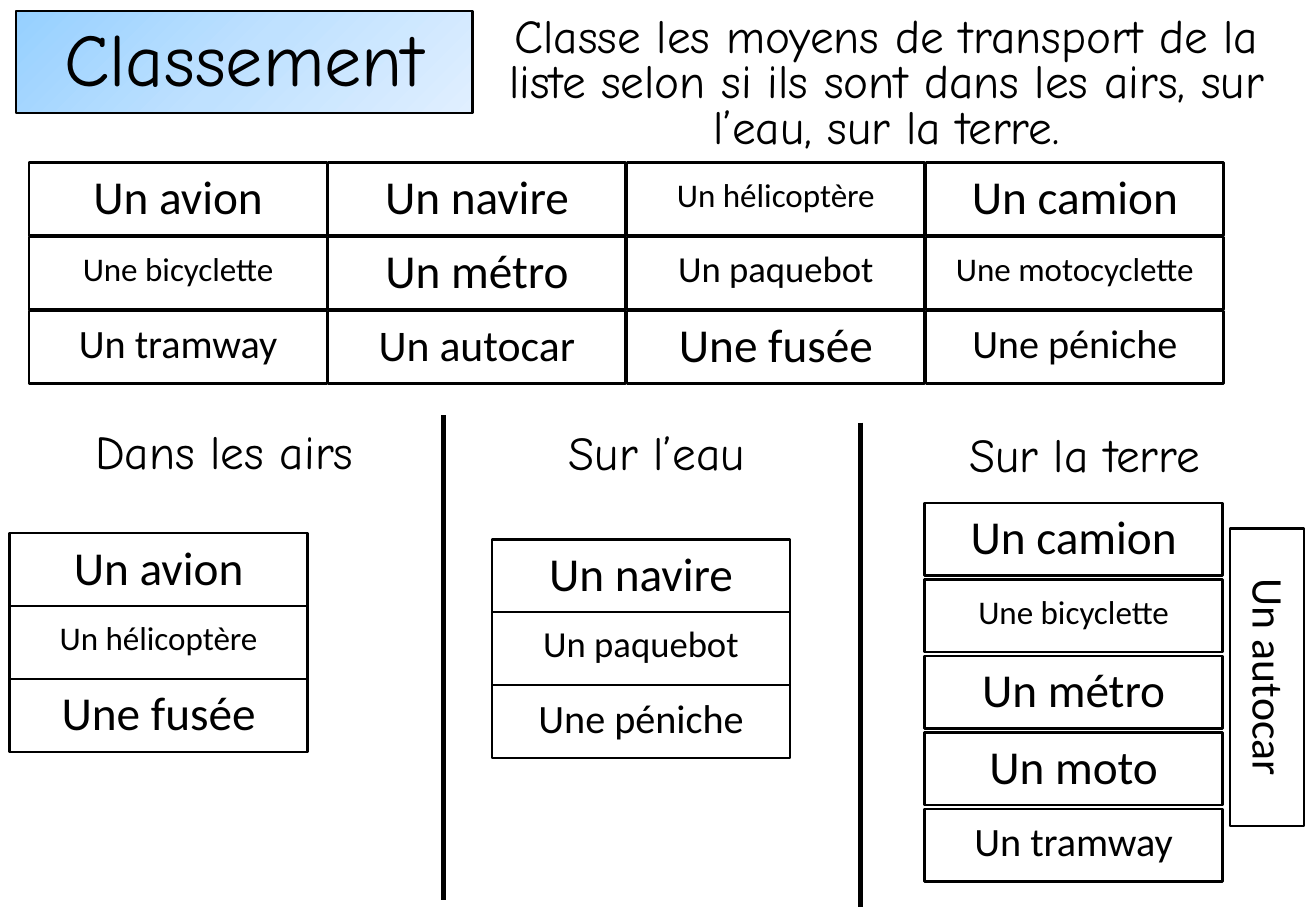
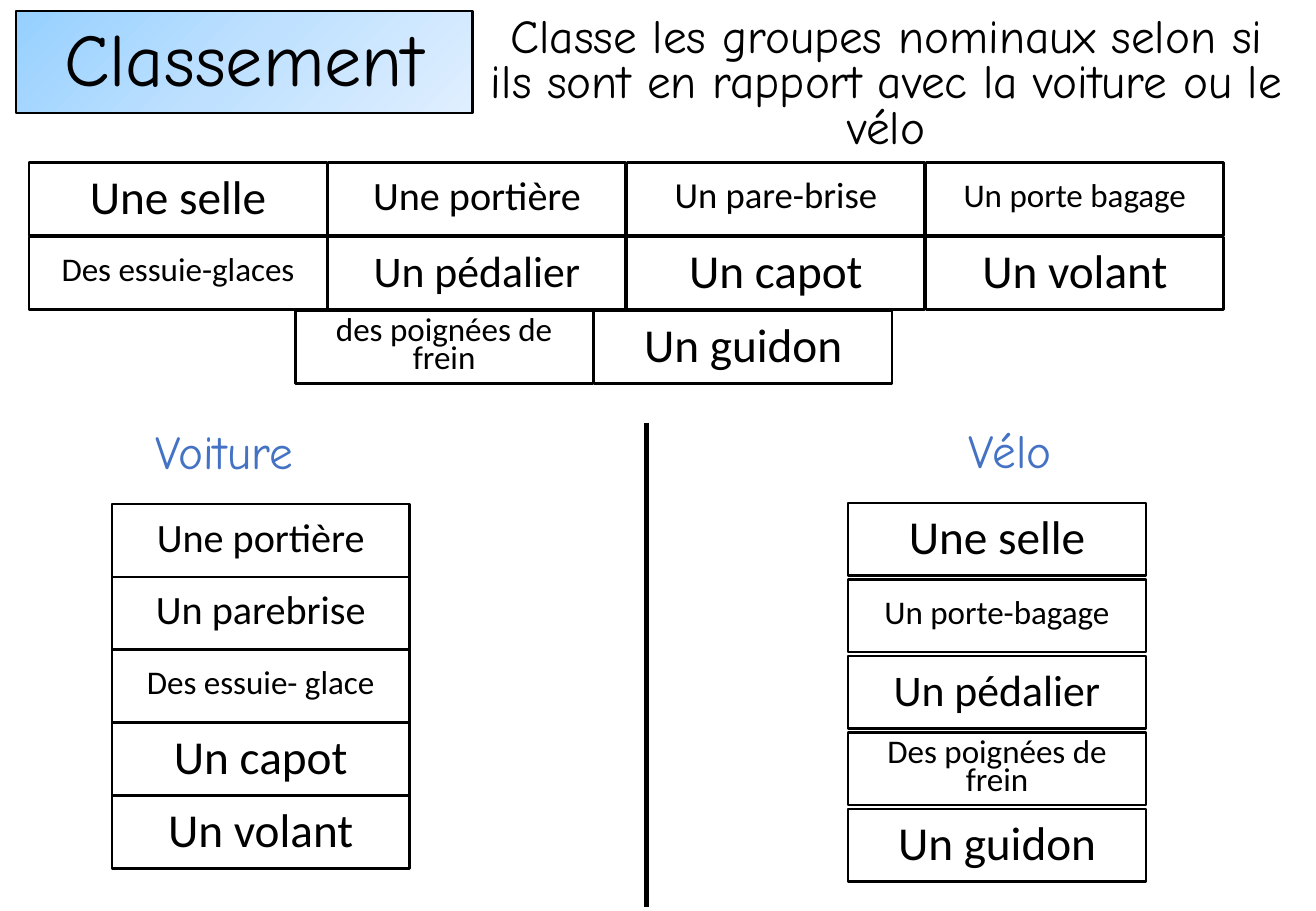
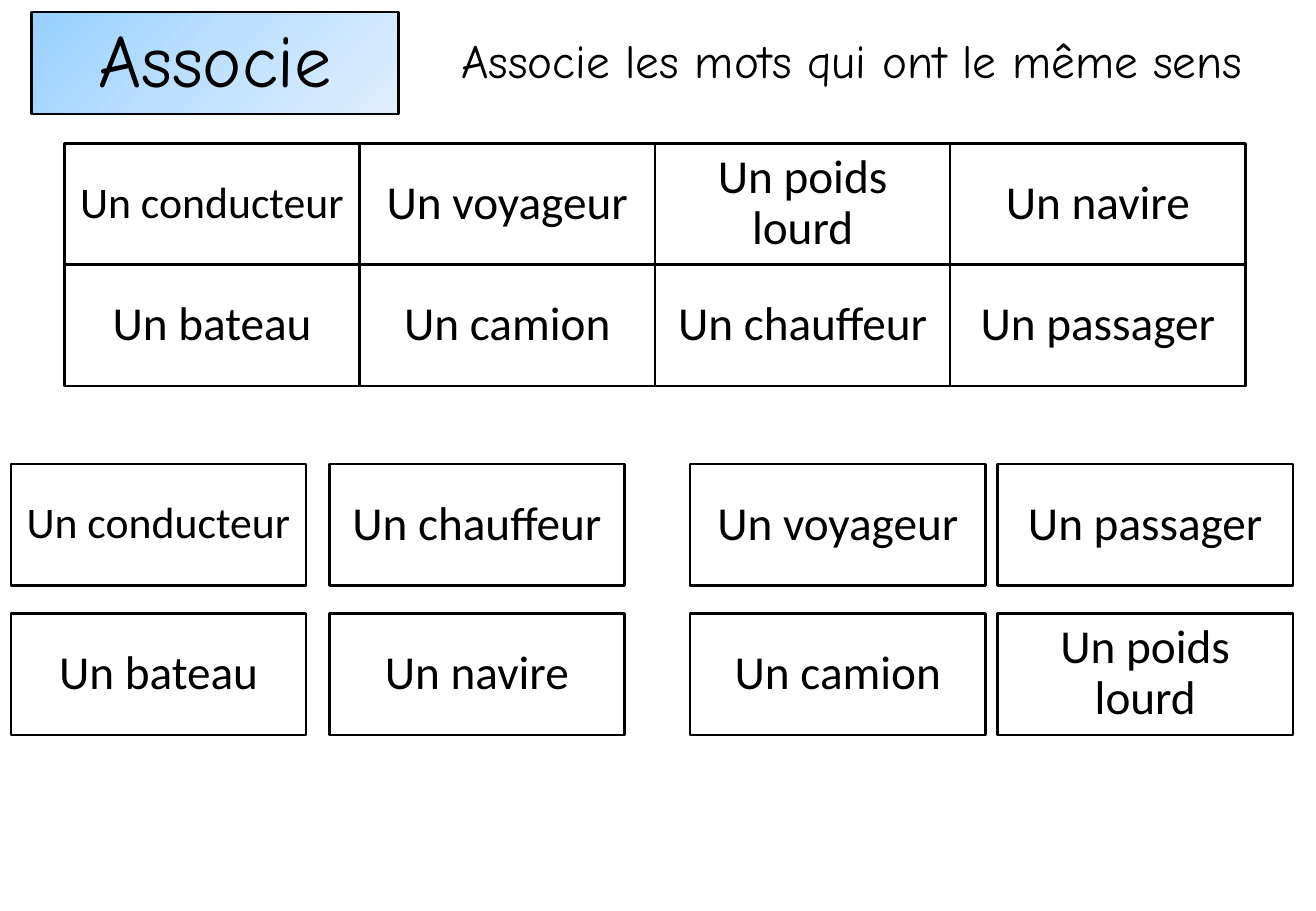
from pptx import Presentation
from pptx.dml.color import RGBColor as RGB
from pptx.enum.shapes import MSO_CONNECTOR as CONN, MSO_SHAPE as SHAPE
from pptx.enum.text import MSO_ANCHOR as ANCHOR, MSO_AUTO_SIZE as AUTOSIZE, PP_ALIGN as ALIGN
from pptx.oxml import parse_xml
from pptx.oxml.ns import nsdecls, qn
from pptx.util import Emu, Pt

PX = 9144  # EMU per px, 100 px to the inch
COLORS = {"ink": "000000", "heading": "4472C4",
          "grad_start": "96D0FF", "grad_mid": "BFE1FF", "grad_end": "E0EFFF"}
HAND, PLAIN = "Comic Neue", "Calibri"

FULL_SIZE = 28
SMALLER_WORDS = {
    25.9: ["Un autocar", "Un pédalier", "Un conducteur"],
    23.8: ["Un tramway", "Une péniche", "Une portière", "Un parebrise"],
    21.7: ["Un paquebot", "Un pare-brise"],
    19.6: ["Une bicyclette", "Un hélicoptère", "Une motocyclette", "Des essuie-glaces",
           "Un porte bagage", "des poignées de frein", "Des essuie- glace",
           "Un porte-bagage", "Des poignées de frein"],
}
WORD_SIZE = {word: size for size, words in SMALLER_WORDS.items() for word in words}
LINE_SPACING = {28: 0.9, 25.9: 0.9, 23.8: 0.8, 21.7: 0.7, 19.6: 0.7}


def rgb(name):
    return RGB.from_string(COLORS[name])


def write(sp, text, size=FULL_SIZE, font=HAND, color="ink", spacing=0.9,
          before=10, anchor=ANCHOR.TOP):
    tf = sp.text_frame
    tf.word_wrap = True
    tf.auto_size = AUTOSIZE.NONE
    tf.vertical_anchor = anchor
    p = tf.paragraphs[0]
    p.alignment = ALIGN.CENTER
    p.line_spacing = spacing
    p.space_before = Pt(before)
    r = p.add_run()
    r.text = text
    r.font.size = Pt(size)
    r.font.name = font
    r.font.color.rgb = rgb(color)
    return p


def outline(line, width):
    line.color.rgb = rgb("ink")
    line.width = Pt(width)


def place(sp, *box):
    sp.left, sp.top, sp.width, sp.height = (Emu(v * PX) for v in box)


class Deck:
    def __init__(self, width, height):
        self.prs = Presentation()
        self.prs.slide_width, self.prs.slide_height = Emu(width * PX), Emu(height * PX)
        self.s = None

    def new_slide(self):
        self.s = self.prs.slides.add_slide(self.prs.slide_layouts[1])

    def title(self, text, *box):
        sp = self.s.shapes.title
        place(sp, *box)
        write(sp, text, size=44, before=0, anchor=ANCHOR.MIDDLE)
        sp.fill.gradient()
        outline(sp.line, 1.5)
        stops = "".join(
            f'<a:gs pos="{pos}"><a:srgbClr val="{COLORS[name]}"/></a:gs>'
            for pos, name in ((0, "grad_start"), (50000, "grad_mid"), (100000, "grad_end")))
        spPr = sp._element.spPr
        spPr.replace(spPr.find(qn("a:gradFill")), parse_xml(
            f'<a:gradFill {nsdecls("a")} rotWithShape="1"><a:gsLst>{stops}</a:gsLst>'
            '<a:lin ang="2700000" scaled="0"/></a:gradFill>'))

    def instruction(self, text, *box, **fmt):
        sp = self.s.placeholders[1]
        place(sp, *box)
        pPr = write(sp, text, **fmt)._p.get_or_add_pPr()
        pPr.set("marL", "0")
        pPr.set("indent", "0")
        pPr.append(parse_xml(f'<a:buNone {nsdecls("a")}/>'))

    def heading(self, text, *box, **fmt):
        sp = self.s.shapes.add_textbox(*(Emu(v * PX) for v in box))
        write(sp, text, **fmt)

    def divider(self, x, top):
        line = self.s.shapes.add_connector(
            CONN.STRAIGHT, *(Emu(v * PX) for v in (x, top, x, top + 399)))
        outline(line.line, 3)
        line._element.spPr.append(parse_xml(f'<a:effectLst {nsdecls("a")}/>'))

    def word(self, text, *box, rotation=0):
        sp = self.s.shapes.add_shape(SHAPE.RECTANGLE, *(Emu(v * PX) for v in box))
        sp.shadow.inherit = False
        sp.fill.background()
        outline(sp.line, 1.5)
        sp.rotation = rotation
        size = WORD_SIZE.get(text, FULL_SIZE)
        write(sp, text, size=size, font=PLAIN, spacing=LINE_SPACING[size],
              anchor=ANCHOR.MIDDLE)

    def grid(self, rows, left, top, dx=246, dy=61, w=245, h=60):
        """Lay out rows of word cards; dx and dy are the steps between cards."""
        for i, row in enumerate(rows):
            for j, text in enumerate(row):
                self.word(text, left + j * dx, top + i * dy, w, h)

    def column(self, words, left, top, dy=60):
        self.grid([[word] for word in words], left, top, dy=dy)

    def sorting_slide(self, instruction, rows):
        self.new_slide()
        self.title("Classement", 13, 9, 376, 84)
        self.instruction(instruction, 389, 9, 681, 125, spacing=0.8)
        self.grid(rows, 24, 134)


def transport_slide(deck):
    deck.sorting_slide(
        "Classe les moyens de transport de la liste selon si ils sont dans les airs, "
        "sur l’eau, sur la terre.",
        [["Un avion", "Un navire", "Un hélicoptère", "Un camion"],
         ["Une bicyclette", "Un métro", "Un paquebot", "Une motocyclette"],
         ["Un tramway", "Un autocar", "Une fusée", "Une péniche"]])
    deck.heading("Dans les airs", 4, 348, 361, 96)
    deck.heading("Sur l’eau", 369, 349, 343, 96)
    deck.heading("Sur la terre", 712, 354, 361, 50, spacing=0.8)
    deck.divider(365, 342)
    deck.divider(708, 348)
    deck.column(["Un avion", "Un hélicoptère", "Une fusée"], 8, 439)
    deck.column(["Un navire", "Un paquebot", "Une péniche"], 405, 444)
    deck.column(["Un camion", "Une bicyclette", "Un métro", "Un moto", "Un tramway"],
                761, 414, dy=63)
    deck.word("Un autocar", 920, 527, 245, 61, rotation=90)


def vehicle_slide(deck):
    deck.sorting_slide(
        "Classe les groupes nominaux selon si ils sont en rapport avec la voiture ou le vélo",
        [["Une selle", "Une portière", "Un pare-brise", "Un porte bagage"],
         ["Des essuie-glaces", "Un pédalier", "Un capot", "Un volant"]])
    deck.grid([["des poignées de frein", "Un guidon"]], 243, 256)
    deck.heading("Voiture", 4, 348, 361, 96, color="heading")
    deck.heading("Vélo", 651, 351, 361, 50, color="heading", spacing=0.8)
    deck.divider(532, 348)
    deck.column(["Une portière", "Un parebrise", "Des essuie- glace", "Un capot", "Un volant"],
                92, 415)
    deck.column(["Une selle", "Un porte-bagage", "Un pédalier", "Des poignées de frein",
                 "Un guidon"], 698, 414, dy=63)


def synonym_slide(deck):
    deck.new_slide()
    deck.title("Associe", 26, 10, 302, 84)
    deck.instruction("Associe les mots qui ont le même sens", 328, 10, 746, 84,
                     anchor=ANCHOR.MIDDLE)
    card = {"w": 243, "h": 100}
    deck.grid([["Un conducteur", "Un voyageur", "Un poids lourd", "Un navire"],
               ["Un bateau", "Un camion", "Un chauffeur", "Un passager"]],
              53, 118, dx=243, dy=100, **card)
    deck.grid([["Un conducteur", "Un chauffeur"], ["Un bateau", "Un navire"]],
              9, 382, dx=262, dy=123, **card)
    deck.grid([["Un voyageur", "Un passager"], ["Un camion", "Un poids lourd"]],
              568, 382, dx=253, dy=123, **card)


def main():
    deck = Deck(1083, 750)
    transport_slide(deck)
    vehicle_slide(deck)
    synonym_slide(deck)
    deck.prs.save("out.pptx")


if __name__ == "__main__":
    main()
